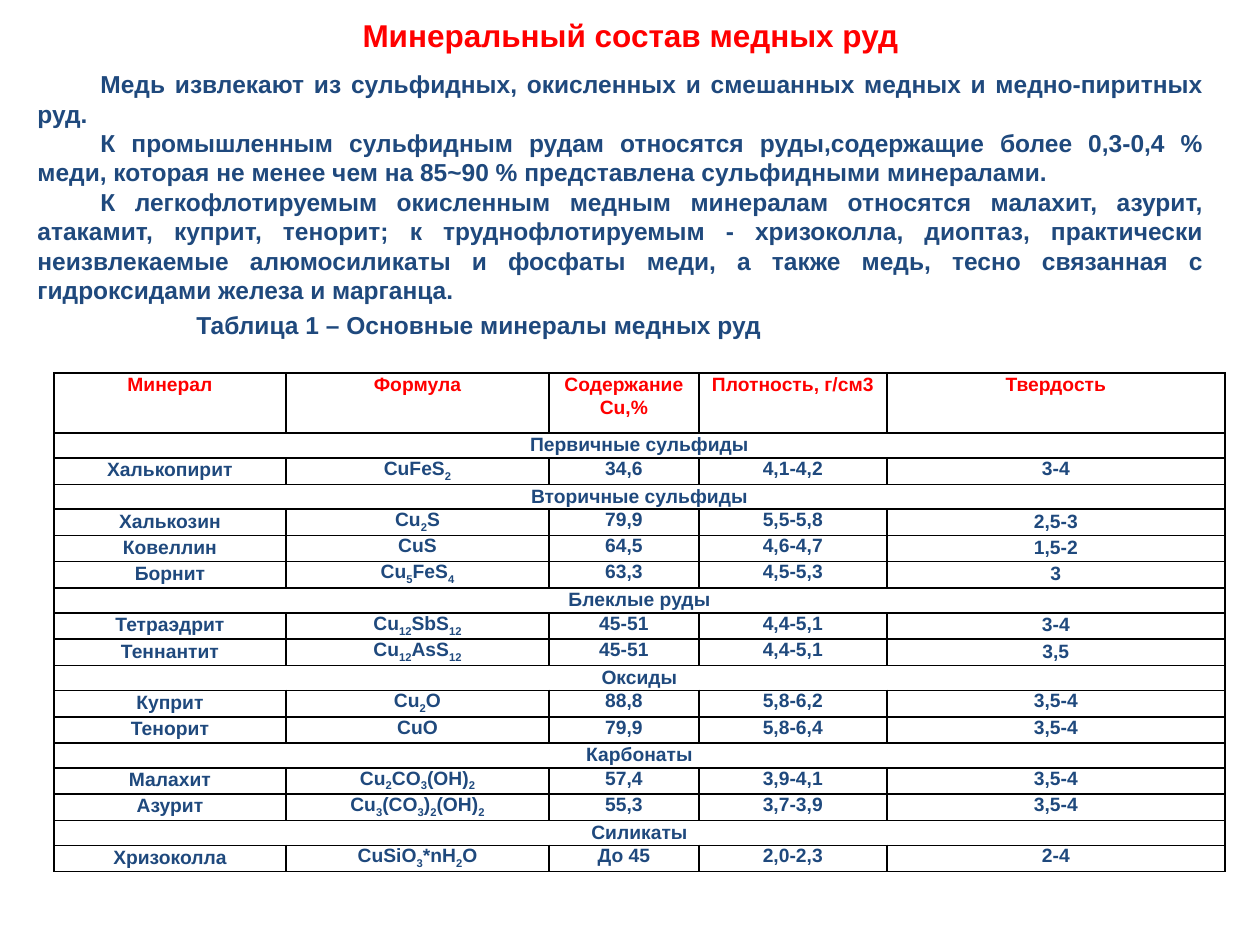
from dataclasses import dataclass
from itertools import groupby

from lxml import etree
from pptx import Presentation
from pptx.dml.color import RGBColor
from pptx.enum.text import MSO_ANCHOR, MSO_AUTO_SIZE, PP_ALIGN
from pptx.oxml.ns import qn
from pptx.util import Emu, Pt

RED = RGBColor(0xFF, 0x00, 0x00)
NAVY = RGBColor(0x1F, 0x49, 0x7D)
BLACK = RGBColor(0x00, 0x00, 0x00)
LEFT, CENTER, JUSTIFY = PP_ALIGN.LEFT, PP_ALIGN.CENTER, PP_ALIGN.JUSTIFY
TOP = MSO_ANCHOR.TOP
GROW = MSO_AUTO_SIZE.SHAPE_TO_FIT_TEXT
FONT = "Arial"
SCALE = 914400 / 126


@dataclass
class Box:
    left: int
    top: int
    width: int
    height: int


@dataclass
class Style:
    size: int
    color: RGBColor
    align: PP_ALIGN
    indent: int = 0


@dataclass
class Ore:
    name: str
    formula: str
    copper: str
    weight: str
    hardness: str


@dataclass
class Group:
    name: str
    ores: list[Ore]
    loose: bool = False


TITLE = "Минеральный состав медных руд"
BODY = [
    "Медь извлекают из сульфидных, окисленных и смешанных медных и медно-пиритных руд.",
    "К промышленным сульфидным рудам относятся руды,содержащие более 0,3-0,4 % меди, "
    "которая не менее чем на 85~90 % представлена сульфидными минералами.",
    "К легкофлотируемым окисленным медным минералам относятся малахит, азурит, атакамит, "
    "куприт, тенорит; к труднофлотируемым - хризоколла, диоптаз, практически неизвлекаемые "
    "алюмосиликаты и фосфаты меди, а также медь, тесно связанная с гидроксидами железа "
    "и марганца.",
]
LABEL = "Таблица 1 – Основные минералы медных руд"
HEADS = ["Минерал", "Формула", "Содержание Cu,%", "Плотность, г/см3", "Твердость"]
GROUPS = [
    Group("Первичные сульфиды", [
        Ore("Халькопирит", "CuFeS2", "34,6", "4,1-4,2", "3-4"),
    ]),
    Group("Вторичные сульфиды", [
        Ore("Халькозин", "Cu2S", "79,9", "5,5-5,8", "2,5-3"),
        Ore("Ковеллин", "CuS", "64,5", "4,6-4,7", "1,5-2"),
        Ore("Борнит", "Cu5FeS4", "63,3", "4,5-5,3", "3"),
    ], True),
    Group("Блеклые руды", [
        Ore("Тетраэдрит", "Cu12SbS12", "45-51", "4,4-5,1", "3-4"),
        Ore("Теннантит", "Cu12AsS12", "45-51", "4,4-5,1", "3,5"),
    ], True),
    Group("Оксиды", [
        Ore("Куприт", "Cu2O", "88,8", "5,8-6,2", "3,5-4"),
        Ore("Тенорит", "CuO", "79,9", "5,8-6,4", "3,5-4"),
    ]),
    Group("Карбонаты", [
        Ore("Малахит", "Cu2CO3(OH)2", "57,4", "3,9-4,1", "3,5-4"),
        Ore("Азурит", "Cu3(CO3)2(OH)2", "55,3", "3,7-3,9", "3,5-4"),
    ]),
    Group("Силикаты", [
        Ore("Хризоколла", "CuSiO3*nH2O", "До 45", "2,0-2,3", "2-4"),
    ]),
]
WIDTHS = [232, 263, 150, 188, 338]
HEAD_H, GROUP_H, ORE_H = 60, 25, 26
HEAD = Style(11, RED, CENTER)
CELL = Style(11, NAVY, CENTER)


def px(count: int) -> Emu:
    return Emu(round(count * SCALE))


def add_run(para, text: str, style: Style, sub: bool = False) -> None:
    run = para.add_run()
    run.text = text
    font = run.font
    font.name, font.size, font.bold = FONT, Pt(style.size), True
    font.color.rgb = style.color
    if sub:
        run._r.get_or_add_rPr().set("baseline", "-25000")


def fill_text(shape, box: Box, lines: list[str], style: Style) -> None:
    shape.left, shape.top = px(box.left), px(box.top)
    shape.width, shape.height = px(box.width), px(box.height)
    frame = shape.text_frame
    frame.word_wrap, frame.auto_size = True, GROW
    frame.vertical_anchor = TOP
    for index, line in enumerate(lines):
        para = frame.add_paragraph() if index else frame.paragraphs[0]
        para.alignment = style.align
        if style.indent:
            para._p.get_or_add_pPr().set("indent", str(px(style.indent)))
        add_run(para, line, style)


def add_text(slide, box: Box, lines: list[str], style: Style) -> None:
    shape = slide.shapes.add_textbox(0, 0, 0, 0)
    fill_text(shape, box, lines, style)


def frame_cell(cell) -> None:
    props = cell._tc.get_or_add_tcPr()
    for side in ("a:lnL", "a:lnR", "a:lnT", "a:lnB"):
        line = etree.SubElement(props, qn(side), w=str(Pt(1)))
        solid = etree.SubElement(line, qn("a:solidFill"))
        etree.SubElement(solid, qn("a:srgbClr"), val=str(BLACK))
    cell.fill.background()
    cell.margin_left = cell.margin_right = px(9)
    cell.margin_top = cell.margin_bottom = 0
    cell.vertical_anchor = TOP


def write_cell(cell, text: str, style: Style, loose: bool, formula: bool = False) -> None:
    para = cell.text_frame.paragraphs[0]
    para.alignment = style.align
    if loose:
        para.line_spacing, para.space_after = 1.07, Pt(8)
    if not formula:
        add_run(para, text, style)
        return
    for digit, part in groupby(text, str.isdigit):
        add_run(para, "".join(part), style, digit)


def add_grid(slide, left: int, top: int) -> None:
    heights = [HEAD_H]
    for group in GROUPS:
        heights += [GROUP_H] + [ORE_H] * len(group.ores)
    shape = slide.shapes.add_table(
        len(heights), len(WIDTHS), px(left), px(top), px(sum(WIDTHS)), px(sum(heights)))
    grid = shape.table
    grid.first_row = grid.horz_banding = False
    for col, width in zip(grid.columns, WIDTHS):
        col.width = px(width)
    for row, height in zip(grid.rows, heights):
        row.height = px(height)
    for cell in grid.iter_cells():
        frame_cell(cell)
    for col, text in enumerate(HEADS):
        write_cell(grid.cell(0, col), text, HEAD, True)
    row = 1
    for group in GROUPS:
        first = grid.cell(row, 0)
        first.merge(grid.cell(row, len(WIDTHS) - 1))
        write_cell(first, group.name, CELL, True)
        for row, ore in enumerate(group.ores, row + 1):
            write_cell(grid.cell(row, 0), ore.name, CELL, True)
            write_cell(grid.cell(row, 1), ore.formula, CELL, False, True)
            write_cell(grid.cell(row, 2), ore.copper, CELL, False)
            write_cell(grid.cell(row, 3), ore.weight, CELL, False)
            write_cell(grid.cell(row, 4), ore.hardness, CELL, group.loose)
        row += 1


def main() -> None:
    deck = Presentation()
    deck.slide_width, deck.slide_height = px(1260), px(945)
    slide = deck.slides.add_slide(deck.slide_layouts[5])
    fill_text(slide.shapes.title, Box(35, 10, 1191, 72), [TITLE], Style(18, RED, CENTER))
    add_text(slide, Box(25, 63, 1191, 251), BODY, Style(14, NAVY, JUSTIFY, 63))
    add_grid(slide, 54, 373)
    add_text(slide, Box(184, 304, 932, 43), [LABEL], Style(14, NAVY, LEFT))
    deck.save("out.pptx")


if __name__ == "__main__":
    main()
